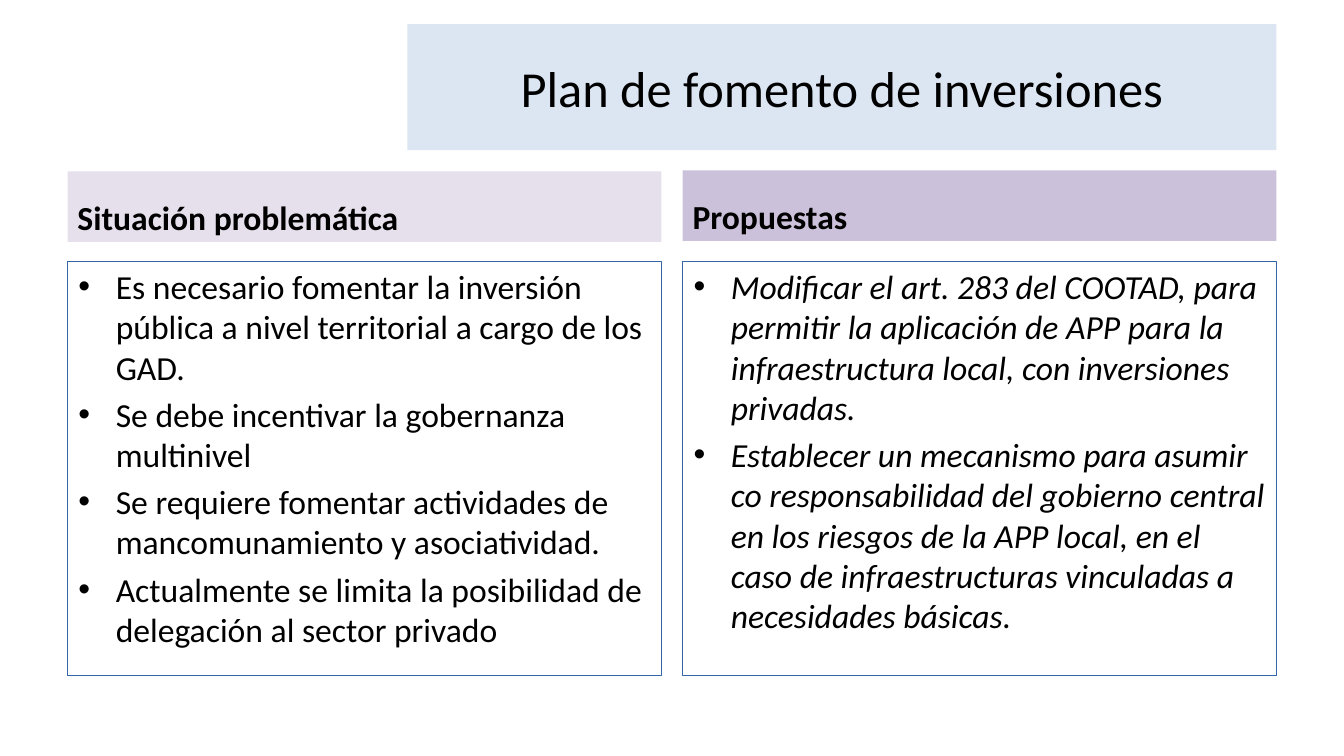
from dataclasses import dataclass

import lxml.etree
import pptx
import pptx.dml.color
import pptx.enum.shapes
import pptx.enum.text
import pptx.oxml.ns
import pptx.util

ALIGN = pptx.enum.text.PP_ALIGN
ANCHOR = pptx.enum.text.MSO_ANCHOR
EMU_PER_PX = 9144


@dataclass(frozen=True)
class Theme:
    font: str = "Calibri"
    ink: str = "000000"
    title_fill: str = "DCE6F2"
    problem_fill: str = "E6E0EC"
    proposal_fill: str = "CCC1DA"
    border: str = "3465A4"
    title_size: int = 36
    body_size: int = 24
    paragraph_gap: float = 4.8
    border_width: float = 0.75


def px(length):
    return pptx.util.Emu(length * EMU_PER_PX)


def rgb(value):
    return pptx.dml.color.RGBColor.from_string(value)


def add_text(paragraph, text, *, font, size, color, bold=False, italic=False, align=ALIGN.LEFT):
    paragraph.alignment = align
    run = paragraph.add_run()
    run.text = text
    run.font.name = font
    run.font.size = pptx.util.Pt(size)
    run.font.color.rgb = rgb(color)
    run.font.bold = bold
    run.font.italic = italic


def add_bullet(paragraph, color):
    properties = paragraph._p.get_or_add_pPr()
    properties.set("marL", str(px(38)))
    properties.set("indent", str(px(-37)))
    qualified = pptx.oxml.ns.qn
    bullet_color = lxml.etree.SubElement(properties, qualified("a:buClr"))
    lxml.etree.SubElement(bullet_color, qualified("a:srgbClr"), val=color)
    lxml.etree.SubElement(properties, qualified("a:buFont"), typeface="Arial")
    lxml.etree.SubElement(properties, qualified("a:buChar"), char="•")


class SlideBuilder:
    """Draws the panels of one slide in a shared theme."""

    def __init__(self, slide, theme):
        self.slide = slide
        self.theme = theme

    def box(self, left, top, width, height, *, fill=None, border=None, anchor=ANCHOR.TOP):
        shape = self.slide.shapes.add_shape(
            pptx.enum.shapes.MSO_SHAPE.RECTANGLE, px(left), px(top), px(width), px(height)
        )
        shape.shadow.inherit = False
        if fill:
            shape.fill.solid()
            shape.fill.fore_color.rgb = rgb(fill)
        else:
            shape.fill.background()
        if border:
            shape.line.color.rgb = rgb(border)
            shape.line.width = pptx.util.Pt(self.theme.border_width)
        else:
            shape.line.fill.background()
        shape.text_frame.word_wrap = True
        shape.text_frame.vertical_anchor = anchor
        return shape.text_frame

    def label(self, paragraph, text, size, **style):
        add_text(paragraph, text, font=self.theme.font, size=size, color=self.theme.ink, **style)

    def title(self, text, left, top, width, height):
        frame = self.box(left, top, width, height, fill=self.theme.title_fill, anchor=ANCHOR.MIDDLE)
        self.label(frame.paragraphs[0], text, self.theme.title_size, align=ALIGN.CENTER)

    def heading(self, text, left, top, width, height, fill):
        frame = self.box(left, top, width, height, fill=fill, anchor=ANCHOR.BOTTOM)
        self.label(frame.paragraphs[0], text, self.theme.body_size, bold=True)

    def bullet_list(self, items, left, top, width, height, italic=False):
        frame = self.box(left, top, width, height, border=self.theme.border)
        for index, item in enumerate(items):
            paragraph = frame.add_paragraph() if index else frame.paragraphs[0]
            add_bullet(paragraph, self.theme.ink)
            if index:
                paragraph.space_before = pptx.util.Pt(self.theme.paragraph_gap)
            self.label(paragraph, item, self.theme.body_size, italic=italic)


PROBLEMS = [
    "Es necesario fomentar la inversión pública a nivel territorial a cargo de los GAD.",
    "Se debe incentivar la gobernanza multinivel",
    "Se requiere fomentar actividades de mancomunamiento y asociatividad.",
    "Actualmente se limita la posibilidad de delegación al sector privado",
]
PROPOSALS = [
    "Modificar el art. 283 del COOTAD, para permitir la aplicación de APP para la "
    "infraestructura local, con inversiones privadas.",
    "Establecer un mecanismo para asumir co responsabilidad del gobierno central en los "
    "riesgos de la APP local, en el caso de infraestructuras vinculadas a necesidades básicas.",
]


def main():
    presentation = pptx.Presentation()
    presentation.slide_width = px(1333)
    presentation.slide_height = px(750)
    theme = Theme()
    builder = SlideBuilder(presentation.slides.add_slide(presentation.slide_layouts[6]), theme)

    builder.title("Plan de fomento de inversiones", 404, 24, 862, 125)
    columns = [
        ("Situación problemática", PROBLEMS, 67, 170, theme.problem_fill, False),
        ("Propuestas", PROPOSALS, 677, 169, theme.proposal_fill, True),
    ]
    for heading, items, left, heading_top, fill, italic in columns:
        builder.heading(heading, left, heading_top, 589, 70, fill)
        builder.bullet_list(items, left, 259, 589, 411, italic)

    presentation.save("out.pptx")


if __name__ == "__main__":
    main()
